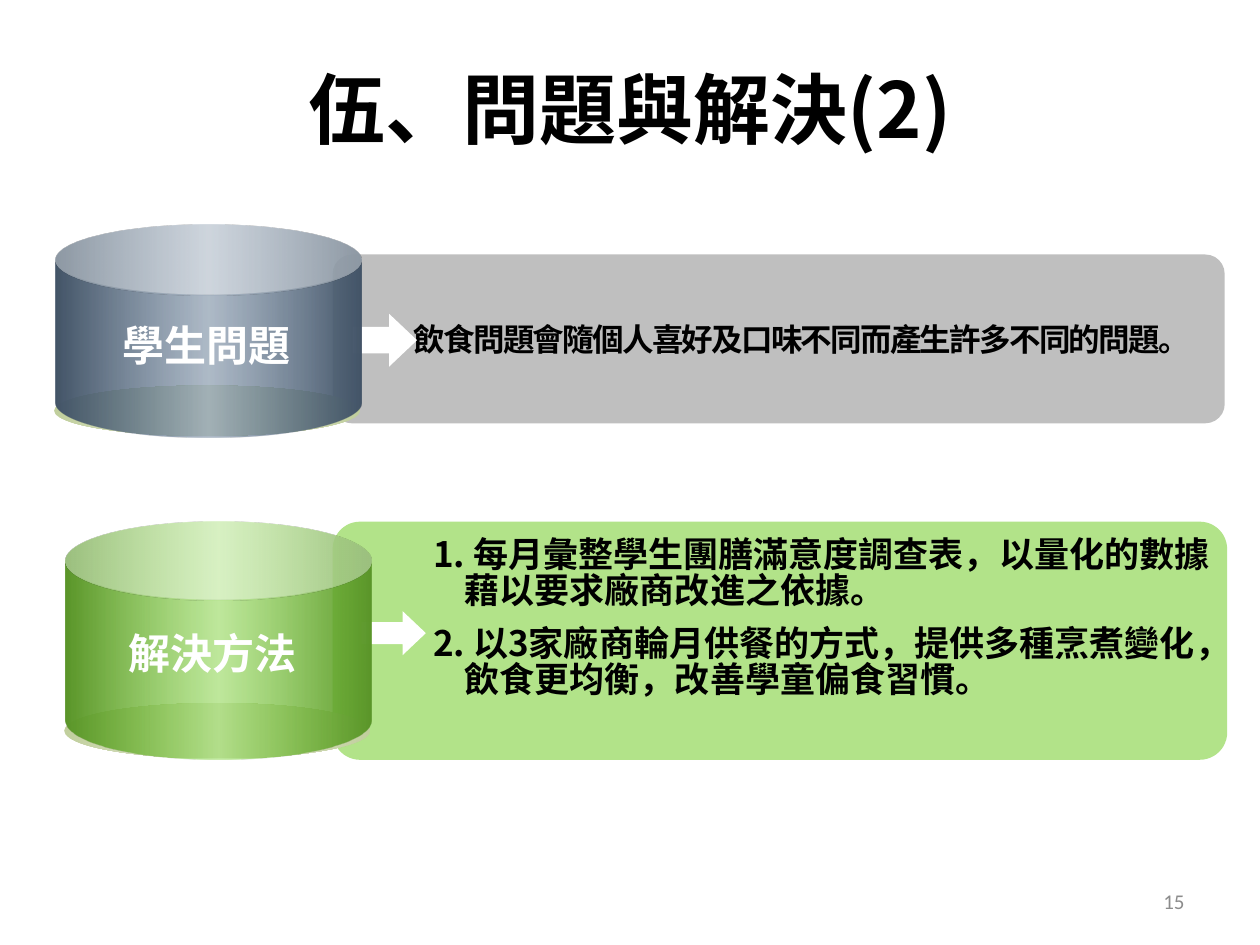
from dataclasses import dataclass

from lxml import etree
from pptx import Presentation
from pptx.dml.color import RGBColor
from pptx.enum.shapes import MSO_SHAPE
from pptx.enum.text import MSO_ANCHOR, PP_ALIGN
from pptx.oxml.ns import qn
from pptx.util import Inches, Pt

ROUNDED = MSO_SHAPE.ROUNDED_RECTANGLE
ARROW = MSO_SHAPE.RIGHT_ARROW
OVAL = MSO_SHAPE.OVAL
CAN = MSO_SHAPE.CAN
MIDDLE = MSO_ANCHOR.MIDDLE
TOP = MSO_ANCHOR.TOP
LEFT, CENTER, RIGHT = PP_ALIGN.LEFT, PP_ALIGN.CENTER, PP_ALIGN.RIGHT


@dataclass(frozen=True)
class Theme:
    font: str = "Noto Sans CJK SC"
    number_font: str = "Calibri"
    ink: str = "000000"
    white: str = "FFFFFF"
    muted: str = "8C8C8C"
    label_shadow: str = "404040"
    gray: str = "BFBFBF"
    green: str = "B2E389"
    base: tuple = ("C1CF9D", "E7ECDC")
    slate_can: tuple = ("445568", "5F7791")
    green_can: tuple = ("5B962A", "7FD13B")
    title_size: int = 44
    label_size: int = 24
    list_size: int = 20
    statement_size: int = 18
    number_size: int = 12


class SlideBuilder:
    def __init__(self, presentation, theme):
        self.theme = theme
        self.slide = presentation.slides.add_slide(presentation.slide_layouts[5])

    def run(self, paragraph, text, size, color, bold=True, font=None):
        run = paragraph.add_run()
        run.text = text
        run.font.size = Pt(size)
        run.font.bold = bold
        run.font.color.rgb = RGBColor.from_string(color)
        run.font.name = font or self.theme.font
        properties = run.font._element
        east_asian = etree.Element(qn("a:ea"), typeface=run.font.name)
        properties.find(qn("a:latin")).addnext(east_asian)
        return run

    def title(self, text, box):
        title = self.slide.shapes.title
        title.left, title.top, title.width, title.height = map(Inches, box)
        title.text_frame.vertical_anchor = MIDDLE
        paragraph = title.text_frame.paragraphs[0]
        paragraph.alignment = CENTER
        self.run(paragraph, text, self.theme.title_size, self.theme.ink)

    def text_frame(self, box, anchor=TOP):
        frame = self.slide.shapes.add_textbox(*map(Inches, box)).text_frame
        frame.word_wrap = True
        frame.vertical_anchor = anchor
        return frame

    def shape(self, shapes, kind, box, adjustments=()):
        shape = shapes.add_shape(kind, *map(Inches, box))
        shape.shadow.inherit = False
        shape.line.fill.background()
        for index, value in enumerate(adjustments):
            shape.adjustments[index] = value
        return shape

    def solid(self, kind, box, color, adjustments):
        shape = self.shape(self.slide.shapes, kind, box, adjustments)
        shape.fill.solid()
        shape.fill.fore_color.rgb = RGBColor.from_string(color)
        return shape

    def panel(self, box, color):
        return self.solid(ROUNDED, box, color, (0.115,))

    def arrow(self, box):
        self.solid(ARROW, box, self.theme.white, (0.5, 0.528))

    def gradient(self, shape, colors, middle_opacity=100):
        edge, middle = colors
        shape.fill.gradient()
        shape.fill.gradient_angle = 0
        stops = shape._element.spPr.find(qn("a:gradFill")).find(qn("a:gsLst"))
        for stop in list(stops):
            stops.remove(stop)
        for position, color in ((0, edge), (50, middle), (100, edge)):
            stop = etree.SubElement(stops, qn("a:gs"), pos=str(position * 1000))
            value = etree.SubElement(stop, qn("a:srgbClr"), val=color)
            if position == 50 and middle_opacity < 100:
                etree.SubElement(value, qn("a:alpha"), val=str(middle_opacity * 1000))

    def cylinder(self, base_box, can_box, colors):
        group = self.slide.shapes.add_group_shape()
        self.gradient(self.shape(group.shapes, OVAL, base_box), self.theme.base)
        can = self.shape(group.shapes, CAN, can_box, (0.332,))
        self.gradient(can, colors, middle_opacity=50)

    def label(self, text, box):
        paragraph = self.text_frame(box).paragraphs[0]
        paragraph.alignment = CENTER
        run = self.run(paragraph, text, self.theme.label_size, self.theme.white)
        effects = etree.Element(qn("a:effectLst"))
        shadow = etree.SubElement(
            effects, qn("a:outerShdw"), dist=str(Pt(2)), dir="2700000"
        )
        etree.SubElement(shadow, qn("a:srgbClr"), val=self.theme.label_shadow)
        run.font._element.find(qn("a:solidFill")).addnext(effects)

    def statement(self, panel, text):
        frame = panel.text_frame
        frame.word_wrap = True
        frame.vertical_anchor = MIDDLE
        frame.margin_left, frame.margin_right = Inches(0.6), 0
        paragraph = frame.paragraphs[0]
        paragraph.alignment = LEFT
        run = self.run(paragraph, text, self.theme.statement_size, self.theme.ink)
        run.font._element.set("spc", "-100")

    def numbered_list(self, items, box):
        frame = self.text_frame(box)
        for index, text in enumerate(items):
            paragraph = frame.add_paragraph() if index else frame.paragraphs[0]
            paragraph.space_before = Pt(10)
            paragraph.line_spacing = 0.85
            properties = paragraph._p.get_or_add_pPr()
            properties.set("marL", str(Inches(0.31)))
            properties.set("indent", str(Inches(-0.25)))
            tabs = etree.SubElement(properties, qn("a:tabLst"))
            etree.SubElement(tabs, qn("a:tab"), pos=str(Inches(1.04)), algn="l")
            self.run(paragraph, text, self.theme.list_size, self.theme.ink)

    def page_number(self, text, box):
        paragraph = self.text_frame(box, MIDDLE).paragraphs[0]
        paragraph.alignment = RIGHT
        self.run(paragraph, text, self.theme.number_size, self.theme.muted,
                 bold=False, font=self.theme.number_font)


def main():
    presentation = Presentation()
    presentation.slide_width, presentation.slide_height = Inches(10), Inches(7.5)
    theme = Theme()
    builder = SlideBuilder(presentation, theme)
    builder.title("伍、問題與解決(2)", (0, 0.23, 10, 1.25))

    builder.panel((2.64, 4.14, 7.1, 1.89), theme.green)
    builder.arrow((2.87, 4.85, 0.51, 0.35))
    builder.cylinder((0.51, 5.58, 2.43, 0.44), (0.52, 4.14, 2.43, 1.89), theme.green_can)
    builder.label("解決方法", (0.51, 4.93, 2.36, 0.5))
    builder.numbered_list(
        (
            "1. 每月彙整學生團膳滿意度調查表，以量化的數據\t藉以要求廠商改進之依據。",
            "2. 以3家廠商輪月供餐的方式，提供多種烹煮變化，飲食更均衡，改善學童偏食習慣。",
        ),
        (3.28, 4.23, 6.46, 1.62),
    )

    problem = builder.panel((2.64, 2.02, 7.08, 1.34), theme.gray)
    builder.statement(problem, "飲食問題會隨個人喜好及口味不同而產生許多不同的問題。")
    builder.arrow((2.8, 2.49, 0.51, 0.42))
    builder.cylinder((0.43, 3.06, 2.43, 0.4), (0.44, 1.78, 2.43, 1.69), theme.slate_can)
    builder.label("學生問題", (0.51, 2.49, 2.26, 0.5))
    builder.page_number("15", (7.17, 6.95, 2.33, 0.4))
    presentation.save("out.pptx")


if __name__ == "__main__":
    main()
